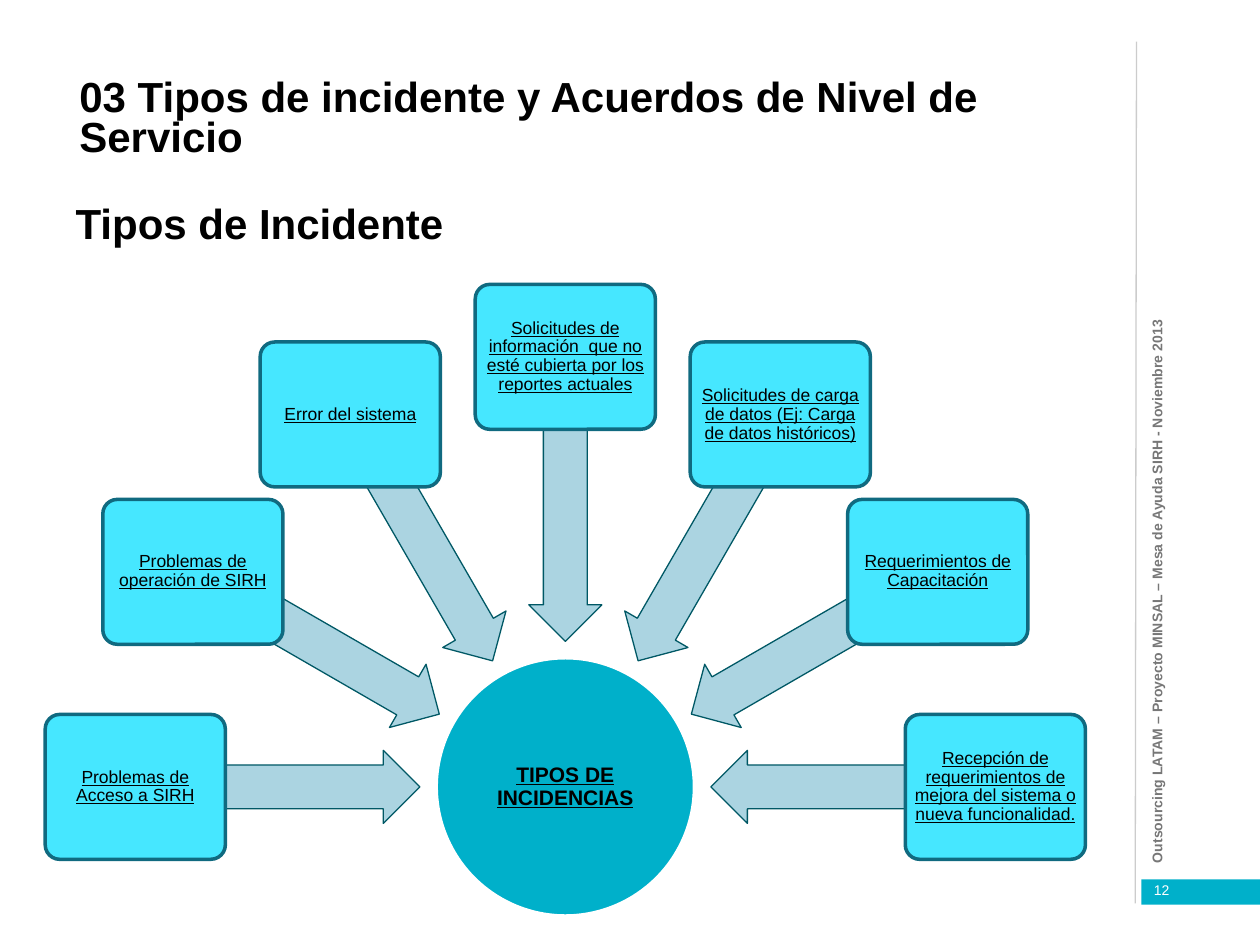
from dataclasses import dataclass
from math import cos, radians, sin

from lxml import etree
from pptx import Presentation
from pptx.dml.color import RGBColor
from pptx.enum.shapes import MSO_CONNECTOR, MSO_SHAPE
from pptx.enum.text import MSO_ANCHOR, MSO_AUTO_SIZE, PP_ALIGN
from pptx.oxml.ns import qn
from pptx.util import Inches, Pt

RECTANGLE, ELLIPSE = MSO_SHAPE.RECTANGLE, MSO_SHAPE.OVAL
ARROW, ROUNDED = MSO_SHAPE.LEFT_ARROW, MSO_SHAPE.ROUNDED_RECTANGLE
TOP, MIDDLE = MSO_ANCHOR.TOP, MSO_ANCHOR.MIDDLE
LEFT, CENTER = PP_ALIGN.LEFT, PP_ALIGN.CENTER


@dataclass(frozen=True)
class Theme:
    font: str = "Arial"
    text: str = "000000"
    white: str = "FFFFFF"
    muted: str = "777777"
    rule: str = "CCCCCC"
    accent: str = "00B0CA"
    arrow: str = "ABD4E1"
    arrow_edge: str = "005865"
    box: str = "46E7FF"
    box_edge: str = "106A80"
    heading_size: int = 24
    hub_size: int = 12
    box_size: int = 10
    small_size: int = 8
    heading_leading: int = 23


theme = Theme()
deck = Presentation()
deck.slide_width, deck.slide_height = Inches(10), Inches(7.5)
CELL = deck.slide_width / 100  # the page is a grid of 100 columns by 75 rows


def cells(*counts):
    """Turn counts of grid columns or rows into lengths."""
    return [round(count * CELL) for count in counts]


def write(shape, text, size, color=theme.text, bold=False, underline=False,
          align=LEFT, anchor=TOP, spacing=None, inset=None):
    frame = shape.text_frame
    frame.word_wrap = True
    frame.auto_size = MSO_AUTO_SIZE.NONE
    frame.vertical_anchor = anchor
    if inset is not None:
        frame.margin_left = frame.margin_right = Inches(inset)
        frame.margin_top = frame.margin_bottom = Inches(inset)
    para = frame.paragraphs[0]
    para.alignment = align
    para.space_before = Pt(0)
    if spacing is not None:
        para.line_spacing = spacing
    span = para.add_run()
    span.text = text
    span.font.name, span.font.size = theme.font, Pt(size)
    span.font.bold, span.font.underline = bold, underline
    span.font.color.rgb = RGBColor.from_string(color)


page = deck.slides.add_slide(deck.slide_layouts[1])

# Headings
title, body = page.placeholders
headings = [
    (title, "03 Tipos de incidente y Acuerdos de Nivel de Servicio", (5.3, 5.9, 82.4, 7.2)),
    (body, "Tipos de Incidente", (5, 16, 82.4, 5.6)),
]
for heading, text, place in headings:
    heading.left, heading.top, heading.width, heading.height = cells(*place)
    properties = heading.text_frame.paragraphs[0]._p.get_or_add_pPr()
    properties.set("marL", "0")
    properties.set("indent", "0")
    etree.SubElement(properties, qn("a:buNone"))
    write(heading, text, theme.heading_size, bold=True, spacing=Pt(theme.heading_leading))

# Rule along the side margin
rule = page.shapes.add_connector(MSO_CONNECTOR.STRAIGHT, *cells(90.2, 3.3, 90.1, 71.7))
rule.line.color.rgb = RGBColor.from_string(theme.rule)
rule.line.width = Pt(0.75)
etree.SubElement(rule._element.spPr, qn("a:effectLst"))

# Wheel: boxes on a half circle, each with an arrow towards the hub
HUB_X, HUB_Y, HUB_SIZE = 44.87, 62.45, 20.5
BOX_RADIUS, BOX_WIDTH, BOX_HEIGHT = 34.13, 14.3, 11.5
ARROW_RADIUS, ARROW_WIDTH, ARROW_HEIGHT = 22.85, 22.6, 5.8
incidents = [
    "Problemas de Acceso a SIRH",
    "Problemas de operación de SIRH",
    "Error del sistema",
    "Solicitudes de información  que no esté cubierta por los reportes actuales",
    "Solicitudes de carga de datos (Ej: Carga de datos históricos)",
    "Requerimientos de Capacitación",
    "Recepción de requerimientos de mejora del sistema o nueva funcionalidad.",
]
hub_format = dict(size=theme.hub_size, bold=True, underline=True, align=CENTER,
                  anchor=MIDDLE, spacing=0.9, inset=0.01)
box_format = dict(size=theme.box_size, underline=True, align=CENTER,
                  anchor=MIDDLE, spacing=0.9, inset=0.02)

# Each part: kind, centre x, centre y, width, height, turn, adjustments,
# fill, edge colour, edge width, text, text format
parts = [
    (RECTANGLE, 95.3, 70.8, 9.4, 2, 0, (), theme.accent, None, 0, "", {}),
    (ELLIPSE, HUB_X, HUB_Y, HUB_SIZE, HUB_SIZE, 0, (), theme.accent, theme.white, 2,
     "TIPOS DE INCIDENCIAS", hub_format),
]
step = 180 / (len(incidents) - 1)
for index, incident in enumerate(incidents):
    turn = 180 + index * step
    across, down = cos(radians(turn)), sin(radians(turn))
    parts += [
        (ARROW, HUB_X + ARROW_RADIUS * across, HUB_Y + ARROW_RADIUS * down,
         ARROW_WIDTH, ARROW_HEIGHT, turn % 360, (0.6, 0.5),
         theme.arrow, theme.arrow_edge, 0.75, "", {}),
        (ROUNDED, HUB_X + BOX_RADIUS * across, HUB_Y + BOX_RADIUS * down,
         BOX_WIDTH, BOX_HEIGHT, 0, (0.1,),
         theme.box, theme.box_edge, 2, incident, box_format),
    ]

for (kind, x, y, width, height, turn, adjustments,
     fill, edge, edge_width, text, text_format) in parts:
    part = page.shapes.add_shape(kind, *cells(x - width / 2, y - height / 2, width, height))
    part.shadow.inherit = False
    part.rotation = turn
    for position, value in enumerate(adjustments):
        part.adjustments[position] = value
    part.fill.solid()
    part.fill.fore_color.rgb = RGBColor.from_string(fill)
    if edge:
        part.line.color.rgb = RGBColor.from_string(edge)
        part.line.width = Pt(edge_width)
    else:
        part.line.fill.background()
    if text:
        write(part, text, **text_format)

# Side caption and page number
caption = page.shapes.add_textbox(*cells(61.9, 37.8, 59.8, 1.6))
caption.rotation = 270
write(caption, "Outsourcing LATAM – Proyecto MINSAL – Mesa de Ayuda SIRH - Noviembre 2013",
      theme.small_size, color=theme.muted, bold=True, anchor=MIDDLE, inset=0)
page_number = page.shapes.add_textbox(*cells(90.6, 69.5, 9.4, 2.4))
write(page_number, "12", theme.small_size, color=theme.white)

deck.save("out.pptx")
